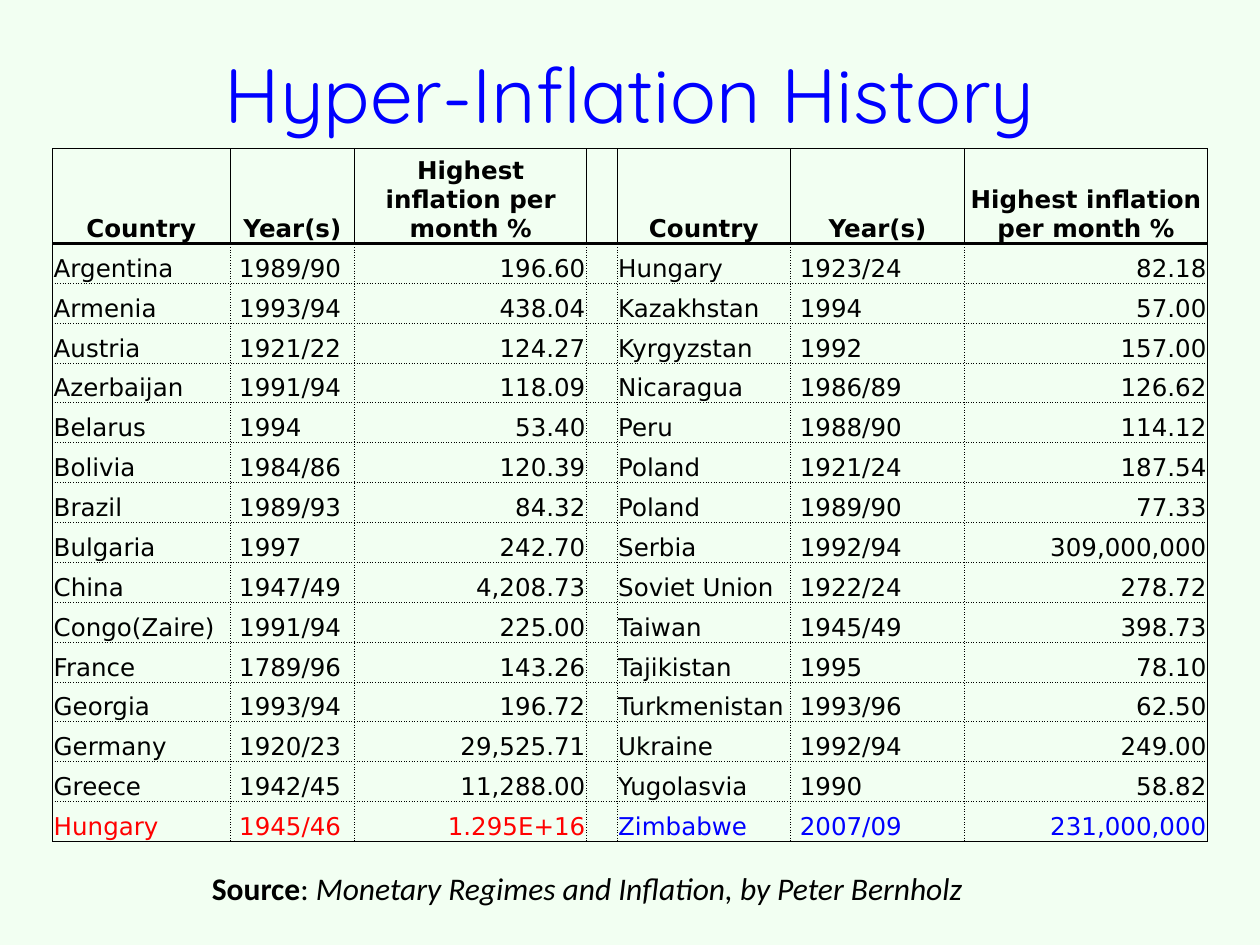
from lxml.etree import SubElement as Sub
from pptx import Presentation
from pptx.dml.color import RGBColor as RGB
from pptx.enum.text import MSO_ANCHOR as Anchor, PP_ALIGN as Align
from pptx.oxml.ns import qn
from pptx.util import Pt


class Theme:
    back = RGB.from_string("F2FFF2")
    black = RGB.from_string("000000")
    red = RGB.from_string("FF0000")
    blue = RGB.from_string("0000FF")
    title = {"name": "Quicksand", "size": Pt(44)}
    body = {"name": "DejaVu Sans", "size": Pt(14)}
    note = {"name": "Calibri", "size": Pt(18)}
    thin, thick = Pt(0.5), Pt(2)


def write(para, text, style, color):
    font = para.add_run().font
    para.runs[-1].text = text
    font.color.rgb = color
    for key, val in style.items():
        setattr(font, key, val)


def edge(cell, side, width, dash):
    line = Sub(cell._tc.get_or_add_tcPr(), qn("a:ln" + side), w=str(int(width)))
    fill = Sub(line, qn("a:solidFill"))
    Sub(fill, qn("a:srgbClr"), val=str(Theme.black))
    Sub(line, qn("a:prstDash"), val=dash)


heads = ["Country", "Year(s)", "Highest inflation per month %"]
left = [
    ("Argentina", "1989/90", "196.60"),
    ("Armenia", "1993/94", "438.04"),
    ("Austria", "1921/22", "124.27"),
    ("Azerbaijan", "1991/94", "118.09"),
    ("Belarus", "1994", "53.40"),
    ("Bolivia", "1984/86", "120.39"),
    ("Brazil", "1989/93", "84.32"),
    ("Bulgaria", "1997", "242.70"),
    ("China", "1947/49", "4,208.73"),
    ("Congo(Zaire)", "1991/94", "225.00"),
    ("France", "1789/96", "143.26"),
    ("Georgia", "1993/94", "196.72"),
    ("Germany", "1920/23", "29,525.71"),
    ("Greece", "1942/45", "11,288.00"),
    ("Hungary", "1945/46", "1.295E+16"),
]
right = [
    ("Hungary", "1923/24", "82.18"),
    ("Kazakhstan", "1994", "57.00"),
    ("Kyrgyzstan", "1992", "157.00"),
    ("Nicaragua", "1986/89", "126.62"),
    ("Peru", "1988/90", "114.12"),
    ("Poland", "1921/24", "187.54"),
    ("Poland", "1989/90", "77.33"),
    ("Serbia", "1992/94", "309,000,000"),
    ("Soviet Union", "1922/24", "278.72"),
    ("Taiwan", "1945/49", "398.73"),
    ("Tajikistan", "1995", "78.10"),
    ("Turkmenistan", "1993/96", "62.50"),
    ("Ukraine", "1992/94", "249.00"),
    ("Yugolasvia", "1990", "58.82"),
    ("Zimbabwe", "2007/09", "231,000,000"),
]
rows = [[*heads, "", *heads]] + [[*a, "", *b] for a, b in zip(left, right)]
widths = [101.5, 71.3, 132.5, 17.3, 99.3, 99.3, 139]
aligns = [Align.LEFT, Align.LEFT, Align.RIGHT, Align.LEFT] * 2

deck = Presentation()
deck.slide_width, deck.slide_height = Pt(720), Pt(540)
slide = deck.slides.add_slide(deck.slide_layouts[6])
slide.background.fill.solid()
slide.background.fill.fore_color.rgb = Theme.back

last, end = len(rows) - 1, len(widths) - 1
table = slide.shapes.add_table(
    last + 1, end + 1, Pt(30), Pt(85), Pt(sum(widths)), Pt(396)
).table
table.first_row = table.horz_banding = False
for col, width in zip(table.columns, widths):
    col.width = Pt(width)
for r, row in enumerate(table.rows):
    row.height = Pt(22.8 if r else 54)

for r, row in enumerate(rows):
    for c, text in enumerate(row):
        cell = table.cell(r, c)
        solid = {
            "L": r == 0 or c == 0,
            "R": r == 0 or c == end,
            "T": r <= 1,
            "B": r in (0, last),
        }
        for side, full in solid.items():
            bold = (side, r) in (("B", 0), ("T", 1))
            width = Theme.thick if bold else Theme.thin
            edge(cell, side, width, "solid" if full else "sysDot")
        cell.fill.background()
        pad = 5.2 if r and c in (1, 5) else 0.72
        look = {
            "vertical_anchor": Anchor.BOTTOM,
            "margin_left": Pt(pad),
            "margin_right": Pt(0.72),
            "margin_top": Pt(0.72),
            "margin_bottom": Pt(0),
        }
        for key, val in look.items():
            setattr(cell, key, val)
        para = cell.text_frame.paragraphs[0]
        para.alignment = aligns[c] if r else Align.CENTER
        color = Theme.black
        if r == last:
            color = Theme.red if c < 3 else Theme.blue
        if text:
            write(para, text, {**Theme.body, "bold": r == 0}, color)
        else:
            Sub(para._p, qn("a:endParaRPr"), sz="1400")

source = [
    ("Source", {"bold": True}),
    (": ", {}),
    ("Monetary Regimes and Inflation, by Peter Bernholz", {"italic": True}),
]
labels = [
    ((114, 493, 504, 29), Anchor.TOP, Align.LEFT, Theme.note, Theme.black, source),
    ((36, 21.6, 648, 62.6), Anchor.MIDDLE, Align.CENTER, Theme.title, Theme.blue,
     [("Hyper-Inflation History", {})]),
]
for place, anchor, align, style, color, parts in labels:
    frame = slide.shapes.add_textbox(*map(Pt, place)).text_frame
    frame.word_wrap = True
    frame.vertical_anchor = anchor
    para = frame.paragraphs[0]
    para.alignment = align
    for text, extra in parts:
        write(para, text, {**style, **extra}, color)

deck.save("out.pptx")
